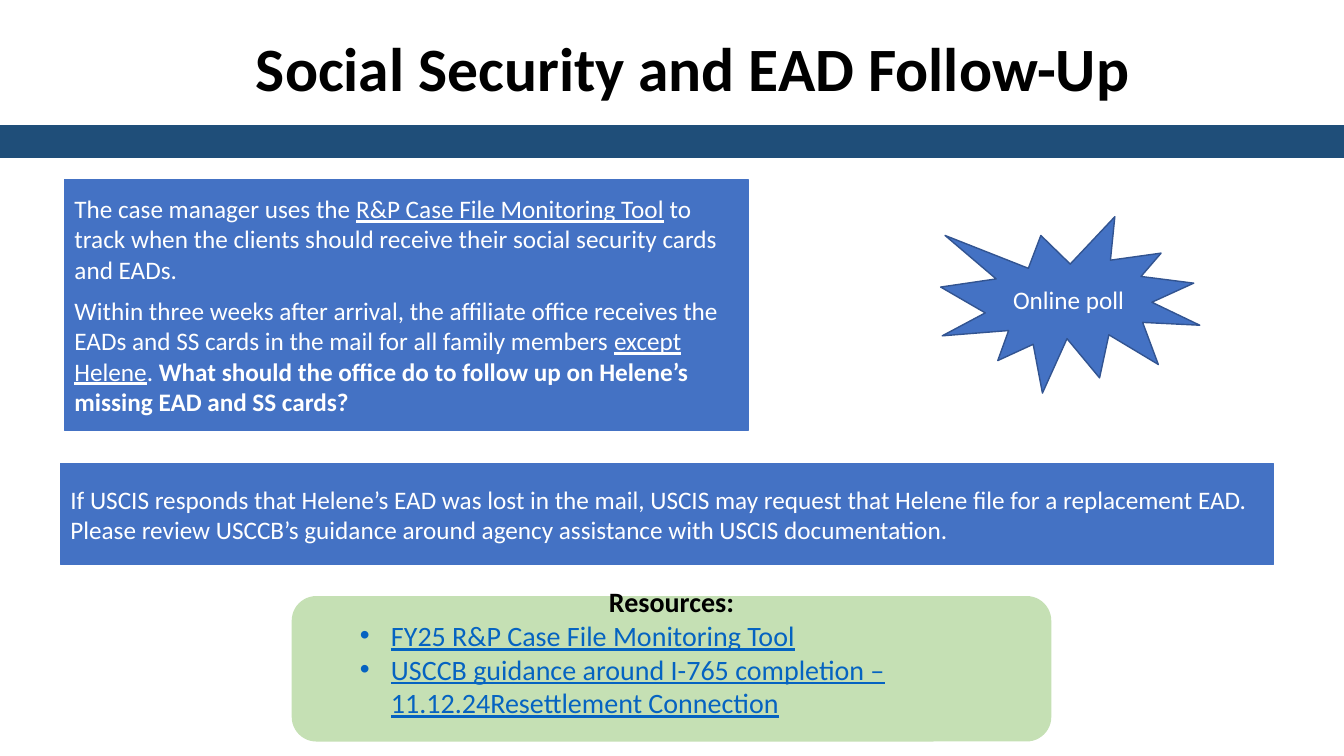
from typing import NamedTuple

from lxml.etree import SubElement
from pptx import Presentation
from pptx.dml.color import RGBColor
from pptx.enum.shapes import MSO_SHAPE as Kind
from pptx.enum.text import MSO_ANCHOR as Anchor, PP_ALIGN as Align
from pptx.oxml.ns import qn
from pptx.util import Inches, Pt

HUES = {
    "black": "000000", "white": "FFFFFF", "navy": "1F4E79", "blue": "4472C4",
    "edge": "325491", "green": "C5E0B4", "link": "0563C1",
}
FONT = "Calibri"


class Run(NamedTuple):
    text: str
    hue: str = "white"
    size: int = 18
    bold: bool = False
    under: bool = False


class Para(NamedTuple):
    runs: list[Run]
    align: Align = Align.LEFT
    gap: int = 0
    bullet: bool = False


class Box(NamedTuple):
    kind: Kind
    at: tuple[float, float, float, float]
    fill: str
    line: str
    paras: list[Para]
    foot: float = 0.05


def color(name: str) -> RGBColor:
    return RGBColor.from_string(HUES[name])


def write(frame, paras: list[Para]) -> None:
    """Fill a text frame, putting gaps only between its paragraphs."""
    frame.word_wrap = True
    for i, para in enumerate(paras):
        item = frame.add_paragraph() if i else frame.paragraphs[0]
        item.alignment = para.align
        item.space_before = Pt(para.gap if i else 0)
        item.space_after = Pt(para.gap)
        if para.bullet:
            props = item._p.get_or_add_pPr()
            props.set("marL", str(Inches(0.81)))
            props.set("indent", str(Inches(-0.31)))
            SubElement(props, qn("a:buFont"), typeface="Arial")
            SubElement(props, qn("a:buChar"), char="•")
        for part in para.runs:
            run = item.add_run()
            run.text = part.text
            font = run.font
            font.name, font.size = FONT, Pt(part.size)
            font.bold, font.underline = part.bold, part.under
            font.color.rgb = color(part.hue)


def draw(slide, box: Box) -> None:
    shape = slide.shapes.add_shape(box.kind, *map(Inches, box.at))
    shape.shadow.inherit = False
    shape.fill.solid()
    shape.fill.fore_color.rgb = color(box.fill)
    shape.line.color.rgb = color(box.line)
    shape.line.width = Pt(1)
    if box.paras:
        frame = shape.text_frame
        frame.vertical_anchor = Anchor.MIDDLE
        frame.margin_bottom = Inches(box.foot)
        write(frame, box.paras)


def link(text: str) -> Para:
    return Para([Run(text, "link", 20, under=True)], bullet=True)


TITLE = [Para([Run("Social Security and EAD Follow-Up", "black", 44, True)])]
CASE = [
    Para([
        Run("The case manager uses the "),
        Run("R&P Case File Monitoring Tool", under=True),
        Run(" to track when the clients should receive their social security "
            "cards and EADs."),
    ], gap=4),
    Para([
        Run("Within three weeks after arrival, the affiliate office receives "
            "the EADs and SS cards in the mail for all family members "),
        Run("except Helene", under=True),
        Run(". "),
        Run("What should the office do to follow up on Helene’s missing EAD "
            "and SS cards?", bold=True),
    ], gap=4),
]
LOST = [Para([
    Run("If USCIS responds that Helene’s EAD was lost in the mail, USCIS may "
        "request that Helene file for a replacement EAD. Please review "
        "USCCB’s guidance around agency assistance with USCIS documentation."),
], gap=4)]
LINKS = [
    Para([Run("Resources:", "black", 20, True)], Align.CENTER),
    link("FY25 R&P Case File Monitoring Tool"),
    link("USCCB guidance around I-765 completion – "
         "11.12.24Resettlement Connection"),
]
POLL = [Para([Run("Online poll")], Align.CENTER)]

BOXES = [
    Box(Kind.RECTANGLE, (0, 1.25, 13.33, 0.31), "navy", "navy", []),
    Box(Kind.RECTANGLE, (0.64, 1.78, 6.78, 2.49), "blue", "blue", CASE),
    Box(Kind.RECTANGLE, (0.6, 4.6, 12.03, 1), "blue", "blue", LOST),
    Box(Kind.FLOWCHART_ALTERNATE_PROCESS, (2.9, 5.92, 7.52, 1.43),
        "green", "green", LINKS, foot=0.38),
    Box(Kind.EXPLOSION1, (9.33, 2.15, 2.57, 1.75), "blue", "edge", POLL),
]


def main() -> None:
    deck = Presentation()
    deck.slide_width, deck.slide_height = Inches(13.33), Inches(7.5)
    slide = deck.slides.add_slide(deck.slide_layouts[6])
    title = slide.shapes.add_textbox(*map(Inches, (2.44, 0.25, 9.31, 1.58)))
    write(title.text_frame, TITLE)
    for box in BOXES:
        draw(slide, box)
    deck.save("out.pptx")


if __name__ == "__main__":
    main()
